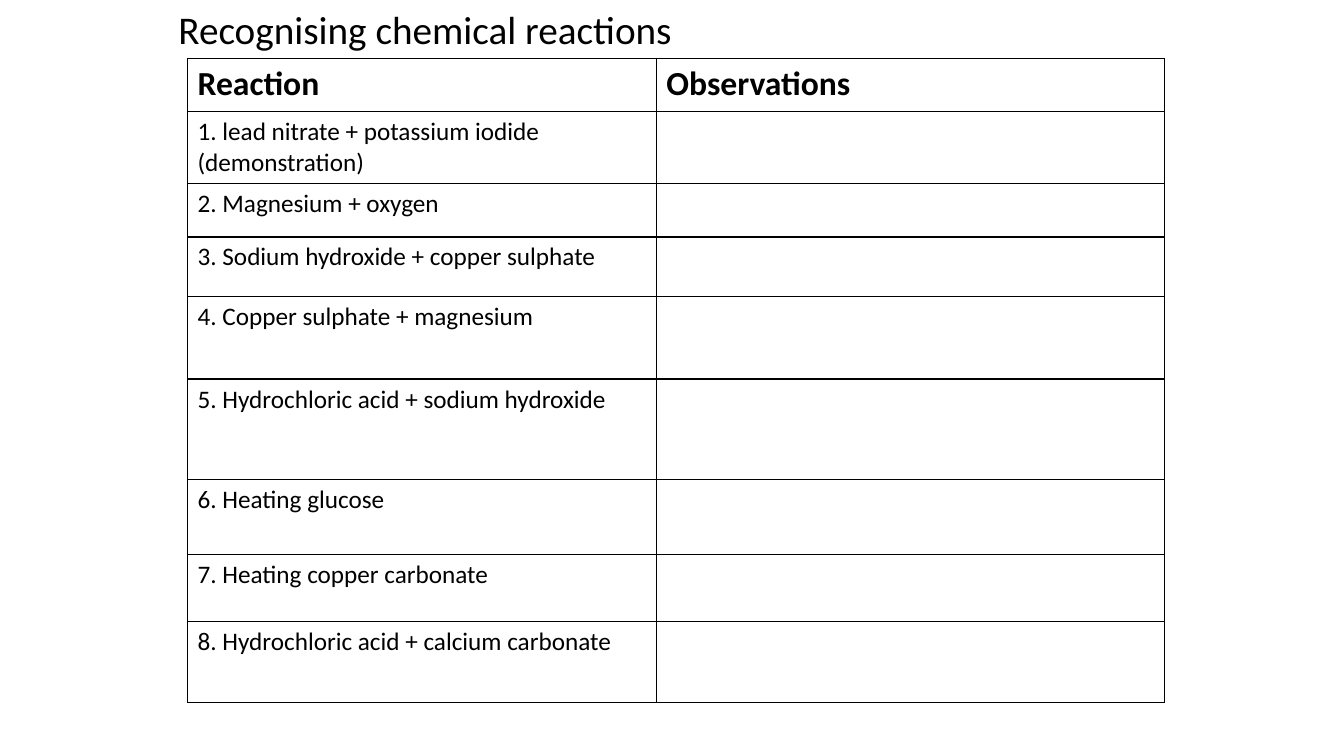
from dataclasses import dataclass

from lxml import etree
from pptx import Presentation
from pptx.dml.color import RGBColor
from pptx.enum.text import MSO_ANCHOR, MSO_AUTO_SIZE, PP_ALIGN
from pptx.oxml.ns import qn
from pptx.slide import Slide
from pptx.table import _Cell as Cell
from pptx.text.text import TextFrame
from pptx.util import Inches, Pt

BLACK = RGBColor(0x00, 0x00, 0x00)
WHITE = RGBColor(0xFF, 0xFF, 0xFF)
FONT = "Calibri"
COLUMN_WIDTHS = (4.65, 5.04)
BORDER_SIDES = ("lnL", "lnR", "lnT", "lnB")


@dataclass(frozen=True)
class ReactionRow:
    height: float
    lines: tuple[str, ...]


HEADER_HEIGHT = 0.53
HEADERS = ("Reaction", "Observations")
REACTIONS = (
    ReactionRow(0.69, ("1. lead nitrate + potassium iodide", "(demonstration)")),
    ReactionRow(0.53, ("2. Magnesium + oxygen",)),
    ReactionRow(0.59, ("3. Sodium hydroxide + copper sulphate",)),
    ReactionRow(0.82, ("4. Copper sulphate + magnesium",)),
    ReactionRow(1.0, ("5. Hydrochloric acid + sodium hydroxide",)),
    ReactionRow(0.74, ("6. Heating glucose",)),
    ReactionRow(0.67, ("7. Heating copper carbonate",)),
    ReactionRow(0.8, ("8. Hydrochloric acid + calcium carbonate",)),
)


def write_lines(frame: TextFrame, lines: tuple[str, ...], size: float, bold: bool = False) -> None:
    """Write one left-aligned paragraph for each line."""
    for index, line in enumerate(lines):
        paragraph = frame.paragraphs[0] if index == 0 else frame.add_paragraph()
        paragraph.alignment = PP_ALIGN.LEFT
        run = paragraph.add_run()
        run.text = line
        run.font.name = FONT
        run.font.size = Pt(size)
        run.font.bold = bold
        run.font.color.rgb = BLACK


def format_cell(cell: Cell) -> None:
    """Give a cell thin black borders and a white fill."""
    properties = cell._tc.get_or_add_tcPr()
    for side in BORDER_SIDES:
        line = etree.SubElement(properties, qn(f"a:{side}"), w=str(Pt(1)))
        fill = etree.SubElement(line, qn("a:solidFill"))
        etree.SubElement(fill, qn("a:srgbClr"), val=str(BLACK))
    cell.fill.solid()
    cell.fill.fore_color.rgb = WHITE
    cell.vertical_anchor = MSO_ANCHOR.TOP


def add_title(slide: Slide) -> None:
    title = slide.shapes.title
    title.left, title.top = Inches(1.67), Inches(0)
    title.width, title.height = Inches(10), Inches(0.57)
    frame = title.text_frame
    frame.word_wrap = True
    frame.auto_size = MSO_AUTO_SIZE.NONE
    frame.vertical_anchor = MSO_ANCHOR.TOP
    write_lines(frame, ("Recognising chemical reactions",), 28)
    frame.paragraphs[0].line_spacing = 1.0
    frame.paragraphs[0].space_before = Pt(0)


def add_reaction_table(slide: Slide) -> None:
    heights = [HEADER_HEIGHT, *(reaction.height for reaction in REACTIONS)]
    table = slide.shapes.add_table(
        len(heights), len(COLUMN_WIDTHS), Inches(1.86), Inches(0.58),
        Inches(sum(COLUMN_WIDTHS)), Inches(sum(heights)),
    ).table
    table.first_row = False
    table.horz_banding = False
    for column, width in zip(table.columns, COLUMN_WIDTHS):
        column.width = Inches(width)
    for row, height in zip(table.rows, heights):
        row.height = Inches(height)
    for cell in table.iter_cells():
        format_cell(cell)

    # Header row, then the reactions with room for observations
    for index, header in enumerate(HEADERS):
        write_lines(table.cell(0, index).text_frame, (header,), 24, bold=True)
    for index, reaction in enumerate(REACTIONS, start=1):
        write_lines(table.cell(index, 0).text_frame, reaction.lines, 18)


def main() -> None:
    presentation = Presentation()
    presentation.slide_width = Inches(13.33)
    presentation.slide_height = Inches(7.5)
    title_only = presentation.slide_layouts.get_by_name("Title Only")
    slide = presentation.slides.add_slide(title_only)
    add_title(slide)
    add_reaction_table(slide)
    presentation.save("out.pptx")


if __name__ == "__main__":
    main()
